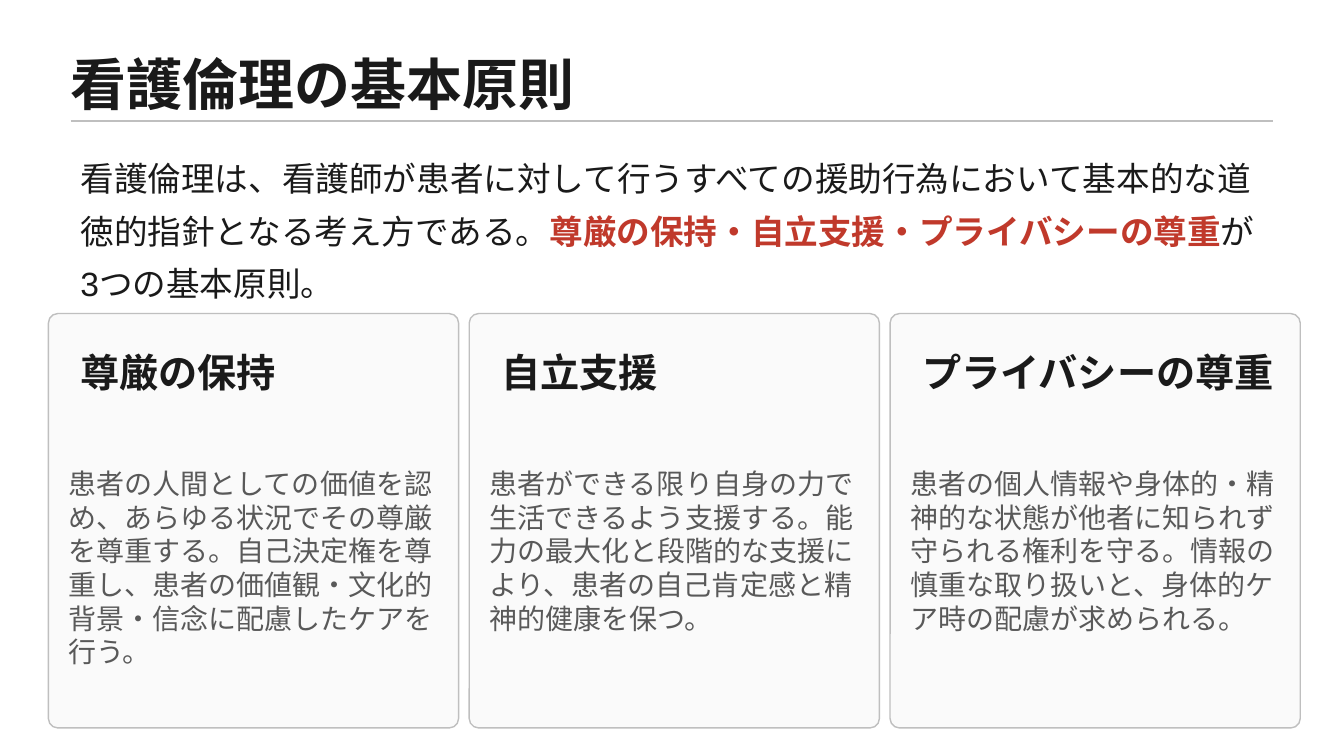
from lxml.etree import SubElement as Sub
from pptx import Presentation
from pptx.dml.color import RGBColor as Rgb
from pptx.enum.shapes import MSO_CONNECTOR as Link, MSO_SHAPE as Shape
from pptx.enum.text import MSO_ANCHOR as Anchor
from pptx.oxml.ns import qn
from pptx.util import Pt

INK, GRAY, RED, RULE, PALE = "1A1A1A", "595959", "C0392B", "BFBFBF", "FAFAFA"


def tint(code):
    return Rgb.from_string(code)


class Deck:
    """Holds the font and the current slide, and draws each kind of element."""

    def __init__(self, show, font):
        self.font = font
        self.slide = show.slides.add_slide(show.slide_layouts[6])

    def text(self, box, parts, size, color=INK, bold=False, mid=False, pad=None, lead=None):
        frame = self.slide.shapes.add_textbox(*map(Pt, box)).text_frame
        frame.word_wrap = True
        frame.vertical_anchor = Anchor.MIDDLE if mid else Anchor.TOP
        if pad is not None:
            frame.margin_left = frame.margin_right = Pt(pad)
            frame.margin_top = frame.margin_bottom = Pt(pad)
        para = frame.paragraphs[0]
        if lead:
            para.line_spacing = lead
        font = para.font
        font.name, font.size, font.bold = self.font, Pt(size), bold
        font.color.rgb = tint(color)
        for words, accent in parts:
            run = para.add_run()
            run.text = words
            if accent:
                run.font.bold = True
                run.font.color.rgb = tint(accent)

    def rule(self, left, top, width):
        line = self.slide.shapes.add_connector(
            Link.STRAIGHT, Pt(left), Pt(top), Pt(left + width), Pt(top))
        line.line.color.rgb = tint(RULE)
        line.line.width = Pt(1)
        Sub(line._element.spPr, qn("a:effectLst"))

    def panel(self, box):
        card = self.slide.shapes.add_shape(Shape.ROUNDED_RECTANGLE, *map(Pt, box))
        card.adjustments[0] = 0.023
        card.shadow.inherit = False
        card.fill.solid()
        card.fill.fore_color.rgb = tint(PALE)
        card.line.color.rgb = tint(RULE)
        card.line.width = Pt(1)

    def card(self, left, head, wide, body):
        self.panel((left, 224, 293, 296))
        self.text((left + 15.8, 238.3, wide, 54.7), [(head, None)], 28, bold=True, mid=True)
        self.text((left + 7.2, 329.8, 286, 207.4), [(body, None)], 20, GRAY)


def main():
    show = Presentation()
    show.slide_width, show.slide_height = Pt(960), Pt(540)
    deck = Deck(show, "Arial")
    left, width = 50.4, 859
    deck.text((left, 30.2, width, 59), [("看護倫理の基本原則", None)], 40, bold=True, mid=True, pad=0)
    deck.rule(left, 86.4, width)
    deck.text((left, 100.8, width, 64.8), [
        ("看護倫理は、看護師が患者に対して行うすべての援助行為において基本的な道徳的指針となる考え方である。", None),
        ("尊厳の保持・自立支援・プライバシーの尊重", RED),
        ("が3つの基本原則。", None),
    ], 24, lead=1.3)
    cards = [
        ("尊厳の保持", 257, "患者の人間としての価値を認め、あらゆる状況でその尊厳を尊重する。自己決定権を尊重し、患者の価値観・文化的背景・信念に配慮したケアを行う。"),
        ("自立支援", 257, "患者ができる限り自身の力で生活できるよう支援する。能力の最大化と段階的な支援により、患者の自己肯定感と精神的健康を保つ。"),
        ("プライバシーの尊重", 277.2, "患者の個人情報や身体的・精神的な状態が他者に知られず守られる権利を守る。情報の慎重な取り扱いと、身体的ケア時の配慮が求められる。"),
    ]
    for col, (head, wide, body) in enumerate(cards):
        deck.card(34.6 + 300.6 * col, head, wide, body)
    show.save("out.pptx")


if __name__ == "__main__":
    main()
